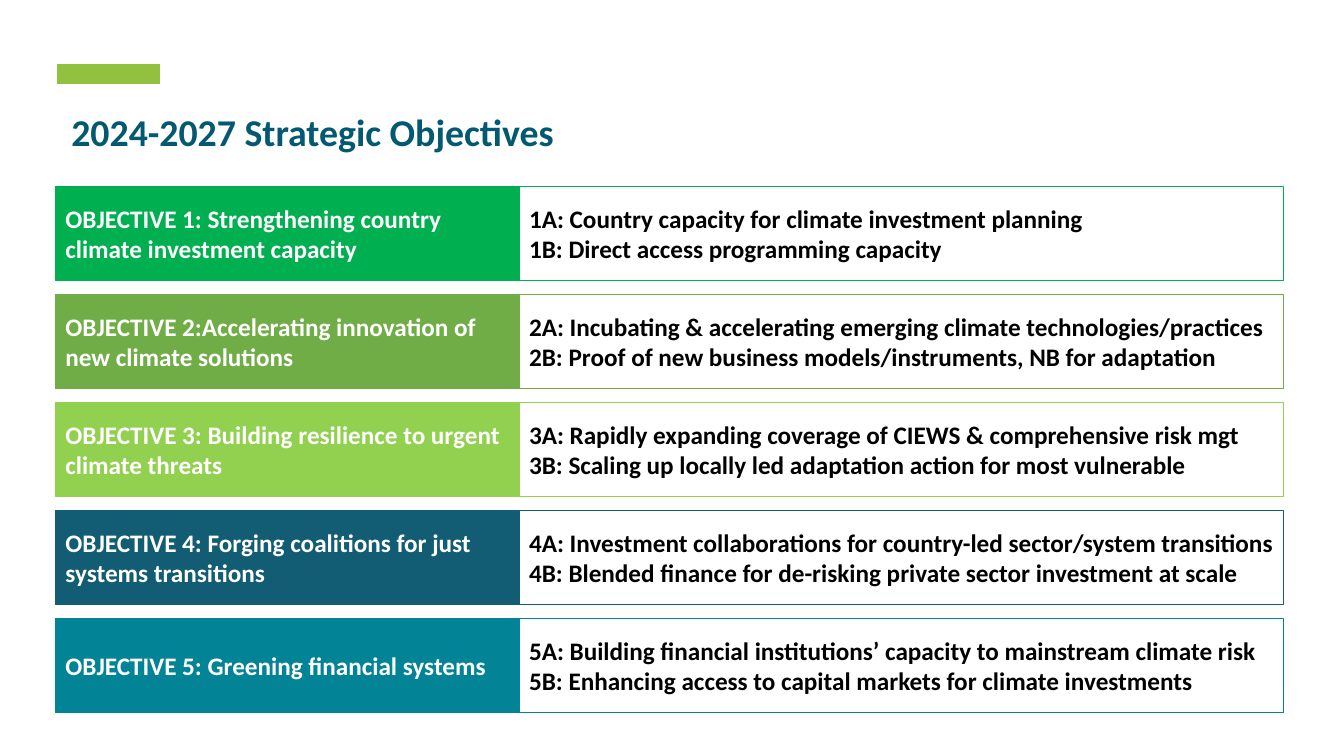
"""Build the 2024-2027 Strategic Objectives slide."""
from dataclasses import dataclass

from lxml.etree import SubElement
from pptx import Presentation
from pptx.dml.color import RGBColor
from pptx.enum.shapes import MSO_CONNECTOR, MSO_SHAPE
from pptx.enum.text import MSO_ANCHOR, PP_ALIGN
from pptx.oxml.ns import qn
from pptx.slide import Slide
from pptx.text.text import TextFrame
from pptx.util import Pt

FONT = "Calibri"
ROW_TOP, ROW_PITCH, ROW_HEIGHT = 133.2, 77.2, 67
GOAL_LEFT, GOAL_WIDTH = 39.6, 330.6
ACTIONS_LEFT, ACTIONS_WIDTH = 370.8, 545.8


@dataclass(frozen=True)
class Objective:
    color: str
    goal: str
    actions: str


OBJECTIVES = [
    Objective("00B050", "OBJECTIVE 1: Strengthening country climate investment capacity",
              "1A: Country capacity for climate investment planning\n"
              "1B: Direct access programming capacity"),
    Objective("70AD47", "OBJECTIVE 2:Accelerating innovation of new climate solutions",
              "2A: Incubating & accelerating emerging climate technologies/practices\n"
              "2B: Proof of new business models/instruments, NB for adaptation"),
    Objective("92D050", "OBJECTIVE 3: Building resilience to urgent climate threats",
              "3A: Rapidly expanding coverage of CIEWS & comprehensive risk mgt\n"
              "3B: Scaling up locally led adaptation action for most vulnerable"),
    Objective("125C74", "OBJECTIVE 4: Forging coalitions for just systems transitions",
              "4A: Investment collaborations for country-led sector/system transitions\n"
              "4B: Blended finance for de-risking private sector investment at scale"),
    Objective("038396", "OBJECTIVE 5: Greening financial systems",
              "5A: Building financial institutions’ capacity to mainstream climate risk\n"
              "5B: Enhancing access to capital markets for climate investments"),
]


def rgb(value: str) -> RGBColor:
    return RGBColor.from_string(value)


def write(tf: TextFrame, text: str, size: float, color: str) -> None:
    tf.word_wrap = True
    tf.text = text
    for p in tf.paragraphs:
        p.alignment = PP_ALIGN.LEFT
        for r in p.runs:
            r.font.name = FONT
            r.font.size = Pt(size)
            r.font.bold = True
            r.font.color.rgb = rgb(color)


def add_accent(s: Slide) -> None:
    line = s.shapes.add_connector(MSO_CONNECTOR.STRAIGHT, Pt(40.6), Pt(53), Pt(114.4), Pt(53))
    line.line.color.rgb = rgb("92C13F")
    line.line.width = Pt(14)
    SubElement(line.element.spPr, qn("a:effectLst"))


def add_title(s: Slide, text: str) -> None:
    sp = s.shapes.add_textbox(Pt(43.9), Pt(77.8), Pt(782.6), Pt(81.4))
    write(sp.text_frame, text, 27, "045972")
    sp.text_frame.paragraphs[0].line_spacing = 0.9


def add_box(s: Slide, left: float, top: float, width: float, text: str,
            fill: str, outline: str, color: str) -> None:
    sp = s.shapes.add_shape(MSO_SHAPE.RECTANGLE, Pt(left), Pt(top), Pt(width), Pt(ROW_HEIGHT))
    sp.shadow.inherit = False
    sp.fill.solid()
    sp.fill.fore_color.rgb = rgb(fill)
    sp.line.color.rgb = rgb(outline)
    sp.line.width = Pt(1)
    tf = sp.text_frame
    tf.vertical_anchor = MSO_ANCHOR.MIDDLE
    tf.margin_right = Pt(5)
    write(tf, text, 18, color)


def add_objective(s: Slide, row: int, item: Objective) -> None:
    top = ROW_TOP + row * ROW_PITCH
    add_box(s, GOAL_LEFT, top, GOAL_WIDTH, item.goal, item.color, item.color, "FFFFFF")
    add_box(s, ACTIONS_LEFT, top, ACTIONS_WIDTH, item.actions, "FFFFFF", item.color, "000000")


def main() -> None:
    prs = Presentation()
    prs.slide_width, prs.slide_height = Pt(960), Pt(540)
    s = prs.slides.add_slide(prs.slide_layouts[6])
    add_accent(s)
    add_title(s, "2024-2027 Strategic Objectives")
    for row, item in enumerate(OBJECTIVES):
        add_objective(s, row, item)
    prs.save("out.pptx")


if __name__ == "__main__":
    main()
